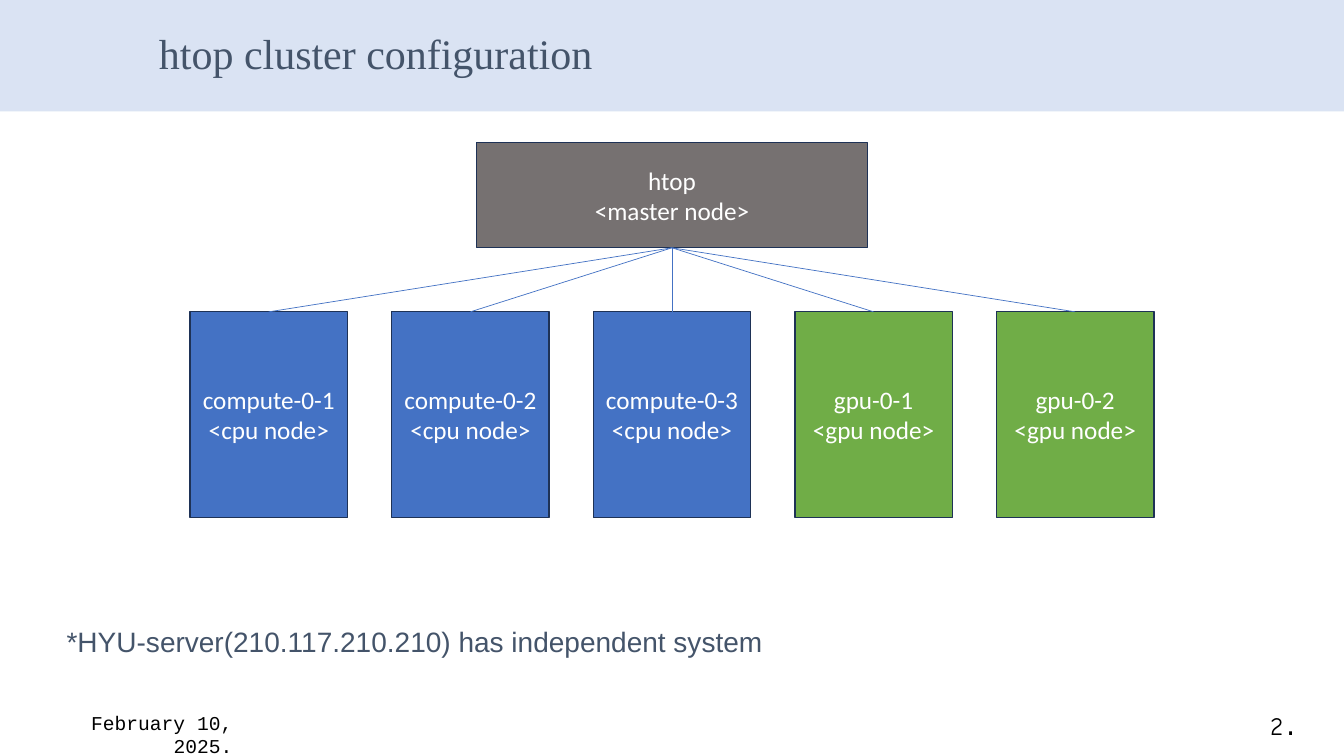
from dataclasses import dataclass

from pptx import Presentation
from pptx.dml.color import RGBColor
from pptx.enum.shapes import MSO_CONNECTOR as Connector, MSO_SHAPE as Shape
from pptx.enum.text import MSO_ANCHOR as Anchor, PP_ALIGN as Align
from pptx.oxml.ns import qn
from pptx.util import Emu, Pt
from lxml.etree import SubElement


@dataclass(frozen=True)
class Theme:
    """Colours, fonts and type sizes of the slide."""
    banner: str = "DAE3F3"
    heading: str = "44546A"
    ink: str = "000000"
    paper: str = "FFFFFF"
    master: str = "767171"
    cpu: str = "4472C4"
    gpu: str = "70AD47"
    outline: str = "1E3256"
    link: str = "4472C4"
    title_font: str = "Times New Roman"
    note_font: str = "Arial"
    node_font: str = "Calibri"
    date_font: str = "Courier New"
    number_font: str = "Comic Neue"
    title_size: int = 30
    note_size: int = 20
    node_size: int = 18
    date_size: int = 14


THEME = Theme()
TOP, BOTTOM = 0, 2
NODES = [
    ("compute-0-1", "<cpu node>", THEME.cpu),
    ("compute-0-2", "<cpu node>", THEME.cpu),
    ("compute-0-3", "<cpu node>", THEME.cpu),
    ("gpu-0-1", "<gpu node>", THEME.gpu),
    ("gpu-0-2", "<gpu node>", THEME.gpu),
]


def px(length):
    """Turn px into EMU at 96 px to the inch."""
    return Emu(length * 9525)


def style(font, name, size, color):
    """Set the face, size and colour of a font."""
    font.name, font.size = name, Pt(size)
    font.color.rgb = RGBColor.from_string(color)


def add_rect(slide, box, fill):
    """Add a flat filled rectangle without an outline."""
    rect = slide.shapes.add_shape(Shape.RECTANGLE, *map(px, box))
    rect.shadow.inherit = False
    rect.fill.solid()
    rect.fill.fore_color.rgb = RGBColor.from_string(fill)
    rect.line.fill.background()
    return rect


def add_label(slide, box, text, font, size, color, align=Align.LEFT):
    """Add one wrapped paragraph of text and return it."""
    frame = slide.shapes.add_textbox(*map(px, box)).text_frame
    frame.word_wrap = True
    label = frame.paragraphs[0]
    label.text, label.alignment = text, align
    style(label.font, font, size, color)
    return label


def add_node(slide, box, host, role, fill):
    """Add an outlined node with its host name and role."""
    node = add_rect(slide, box, fill)
    node.line.color.rgb = RGBColor.from_string(THEME.outline)
    node.line.width = Pt(1)
    frame = node.text_frame
    frame.word_wrap, frame.vertical_anchor = True, Anchor.MIDDLE
    frame.text = f"{host}\n{role}"
    for line in frame.paragraphs:
        line.alignment = Align.CENTER
        style(line.font, THEME.node_font, THEME.node_size, THEME.paper)
    return node


def add_link(slide, node, master):
    """Join the top of a node to the bottom of the master."""
    link = slide.shapes.add_connector(Connector.STRAIGHT, 0, 0, 0, 0)
    link.begin_connect(node, TOP)
    link.end_connect(master, BOTTOM)
    link.line.color.rgb = RGBColor.from_string(THEME.link)
    link.line.width = Pt(0.5)
    SubElement(link._element.spPr, qn("a:effectLst"))


def add_header(slide, box):
    """Draw the banner and the title."""
    left, top, width, height = box
    add_rect(slide, box, THEME.banner)
    title = add_label(slide, (left + 142, top + 27, 995, 43), "htop cluster configuration",
                      THEME.title_font, THEME.title_size, THEME.heading)
    title.line_spacing = 0.9


def add_cluster(slide, box):
    """Draw the master above an even row of linked nodes."""
    left, top, width, height = box
    master_width, master_height = 372, 100
    node_width, node_height = 150, 196
    pitch = (width - node_width) // (len(NODES) - 1)
    master_left = left + (width - master_width) // 2
    master = add_node(slide, (master_left, top, master_width, master_height),
                      "htop", "<master node>", THEME.master)
    node_top = top + height - node_height
    nodes = [add_node(slide, (left + i * pitch, node_top, node_width, node_height), *node)
             for i, node in enumerate(NODES)]
    for node in nodes:
        add_link(slide, node, master)


def add_note(slide, box):
    """Write the remark below the cluster."""
    note = add_label(slide, box, "*HYU-server(210.117.210.210) has independent system",
                     THEME.note_font, THEME.note_size, THEME.heading)
    note.line_spacing = 0.9


def add_footer(slide, box):
    """Write the date at the left and the page number at the right."""
    left, top, width, height = box
    add_label(slide, (left, top, 204, height), "February 10, 2025.",
              THEME.date_font, THEME.date_size, THEME.ink, Align.RIGHT)
    number = add_label(slide, (left + width - 57, top, 57, height), "",
                       THEME.number_font, THEME.node_size, THEME.ink, Align.RIGHT)
    for text, font in (("2", THEME.number_font), (".", THEME.date_font)):
        run = number.add_run()
        run.text, run.font.name = text, font


def main():
    """Build the slide and save it."""
    deck = Presentation()
    deck.slide_width, deck.slide_height = px(1280), px(720)
    slide = deck.slides.add_slide(deck.slide_layouts[6])
    add_header(slide, (0, 0, 1280, 106))
    add_cluster(slide, (181, 136, 918, 357))
    add_note(slide, (54, 594, 1173, 40))
    add_footer(slide, (27, 672, 1219, 38))
    deck.save("out.pptx")


if __name__ == "__main__":
    main()
